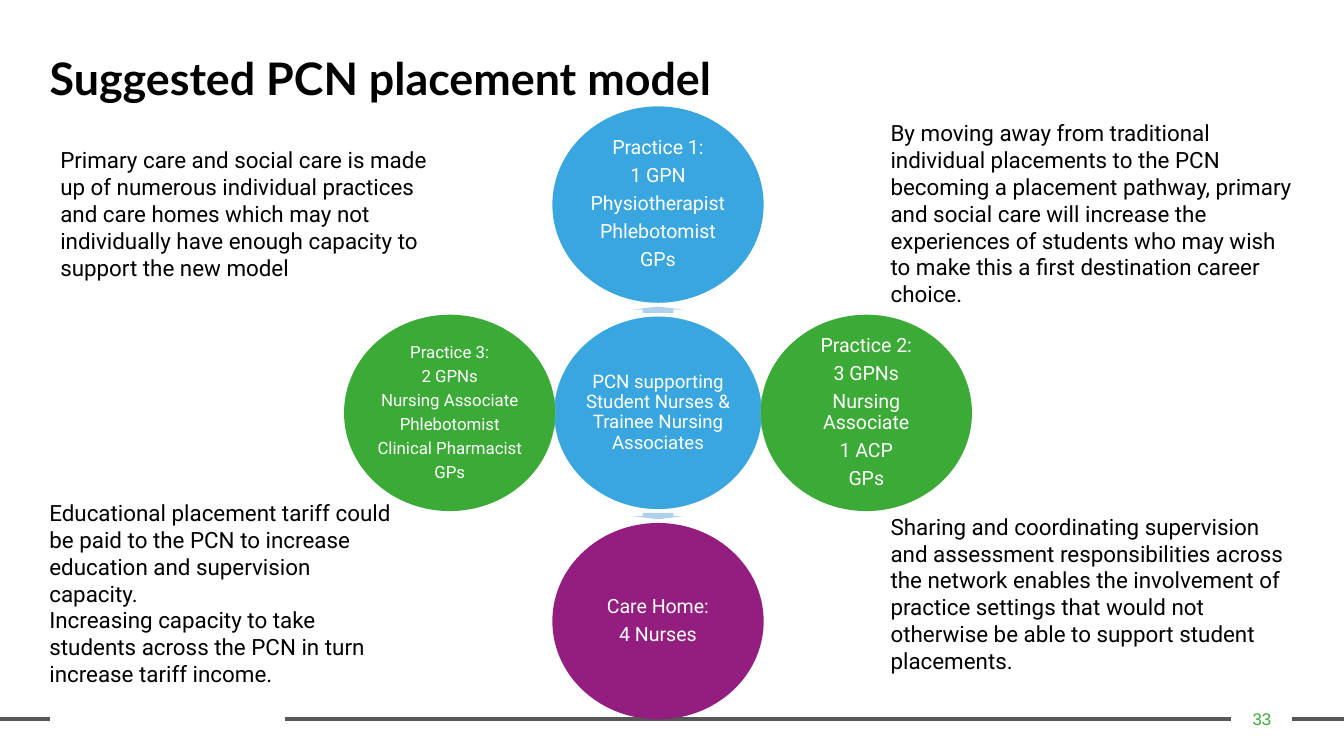
"""Build the slide that shows the suggested PCN placement model."""
from pptx import Presentation
from pptx import util as u
from pptx.dml.color import RGBColor
from pptx.enum import shapes, text

Pt = u.Pt


def color(hex_code):
    return RGBColor.from_string(hex_code)


def write(frame, lines, size, font, hex_code, paragraph_format, **frame_format):
    for name, value in frame_format.items():
        setattr(frame, name, value)
    frame.text = "\n".join(lines)
    for paragraph in frame.paragraphs:
        for name, value in paragraph_format.items():
            setattr(paragraph, name, value)
        paragraph.font.size = Pt(size)
        paragraph.font.name = font
        paragraph.font.color.rgb = color(hex_code)


deck = Presentation()
deck.slide_width, deck.slide_height = Pt(720), Pt(405)
slide = deck.slides.add_slide(deck.slide_layouts[5])

title = slide.shapes.title
title.left, title.top, title.width, title.height = Pt(19.4), Pt(26.6), Pt(579.6), Pt(46.8)
write(title.text_frame, ["Suggested PCN placement model"], 24, "Lato", "000000",
      {"alignment": text.PP_ALIGN.LEFT, "line_spacing": 0.9},
      vertical_anchor=text.MSO_ANCHOR.TOP, auto_size=text.MSO_AUTO_SIZE.NONE)
title.text_frame.paragraphs[0].font.bold = True

for start, end in [(692.3, 720), (152.6, 659.5), (-0.5, 26.8)]:
    footer_rule = slide.shapes.add_connector(
        shapes.MSO_CONNECTOR.STRAIGHT, Pt(start), Pt(385), Pt(end), Pt(385))
    footer_rule.line.color.rgb = color("575756")
    footer_rule.line.width = Pt(2.25)
    effects = footer_rule._element.spPr.makeelement(
        "{http://schemas.openxmlformats.org/drawingml/2006/main}effectLst", {})
    footer_rule._element.spPr.append(effects)

page_number = slide.shapes.add_textbox(Pt(659.5), Pt(374.4), Pt(33), Pt(21.6))
write(page_number.text_frame, ["33"], 9, "Arial", "3BAA36",
      {"alignment": text.PP_ALIGN.CENTER}, word_wrap=True,
      vertical_anchor=text.MSO_ANCHOR.MIDDLE,
      margin_left=Pt(5), margin_right=Pt(5), margin_top=Pt(3), margin_bottom=Pt(3))

hub_x, hub_y = 352.5, 221.2
spread, arrow_reach, arrow_length = 111.6, 55.3, 27.4
members = [
    (0, 0, None, 0, "39A6DF", 10,
     ["PCN supporting Student Nurses & Trainee Nursing Associates"]),
    (0, -1, 270, 3.4, "39A6DF", 10.5,
     ["Practice 1:", "1 GPN", "Physiotherapist", "Phlebotomist", "GPs"]),
    (1, 0, 180, 0.6, "3BAA36", 10.5,
     ["Practice 2:", "3 GPNs", "Nursing Associate", "1 ACP", "GPs"]),
    (0, 1, 90, 3.4, "941D80", 10.5, ["Care Home:", "4 Nurses"]),
    (-1, 0, 0, 0.6, "3BAA36", 9,
     ["Practice 3:", "2 GPNs", "Nursing Associate", "Phlebotomist",
      "Clinical Pharmacist", "GPs"]),
]
for across, down, turn, thickness, fill, size, staff in members:
    is_hub = turn is None
    if not is_hub:
        arrow = slide.shapes.add_shape(
            shapes.MSO_SHAPE.RIGHT_ARROW,
            Pt(hub_x + across * arrow_reach - thickness / 2),
            Pt(hub_y + down * arrow_reach - arrow_length / 2),
            Pt(thickness), Pt(arrow_length))
        arrow.rotation = turn
        arrow.adjustments[0], arrow.adjustments[1] = 0.6, 0.5
        arrow.fill.solid()
        arrow.fill.fore_color.rgb = color("AFD0EC")
        arrow.line.fill.background()
        arrow.shadow.inherit = False
    width, height = (112.3, 104.2) if is_hub else (113.2, 105.2)
    circle = slide.shapes.add_shape(
        shapes.MSO_SHAPE.OVAL,
        Pt(hub_x + across * spread - width / 2),
        Pt(hub_y + down * spread - height / 2), Pt(width), Pt(height))
    circle.shadow.inherit = False
    circle.fill.solid()
    circle.fill.fore_color.rgb = color(fill)
    if is_hub:
        circle.line.color.rgb = color("FFFFFF")
        circle.line.width = Pt(1)
    else:
        circle.line.fill.background()
    inset = Pt(1)
    write(circle.text_frame, staff, size, "Roboto", "FFFFFF",
          {"alignment": text.PP_ALIGN.CENTER, "line_spacing": 0.9,
           "space_after": Pt(round(size * 0.35, 2))},
          word_wrap=True, vertical_anchor=text.MSO_ANCHOR.MIDDLE,
          margin_left=inset, margin_right=inset, margin_top=inset, margin_bottom=inset)

notes = [
    (25.2, 75, 218, 80,
     ["Primary care and social care is made up of numerous individual practices and "
      "care homes which may not individually have enough capacity to support the new model"]),
    (19.4, 263.8, 201.6, 108.7,
     ["Educational placement tariff could be paid to the PCN to increase education and "
      "supervision capacity.",
      "Increasing capacity to take students across the PCN in turn increase tariff income."]),
    (470, 60.3, 231, 108.7,
     ["By moving away from traditional individual placements to the PCN becoming a "
      "placement pathway, primary and social care will increase the experiences of "
      "students who may wish to make this a first destination career choice."]),
    (470, 271.2, 230.4, 94.3,
     ["Sharing and coordinating supervision and assessment responsibilities across the "
      "network enables the involvement of practice settings that would not otherwise be "
      "able to support student placements."]),
]
for left, top, width, height, statements in notes:
    note = slide.shapes.add_textbox(Pt(left), Pt(top), Pt(width), Pt(height))
    write(note.text_frame, statements, 12, "Roboto", "000000", {},
          word_wrap=True, auto_size=text.MSO_AUTO_SIZE.SHAPE_TO_FIT_TEXT)

deck.save("out.pptx")
